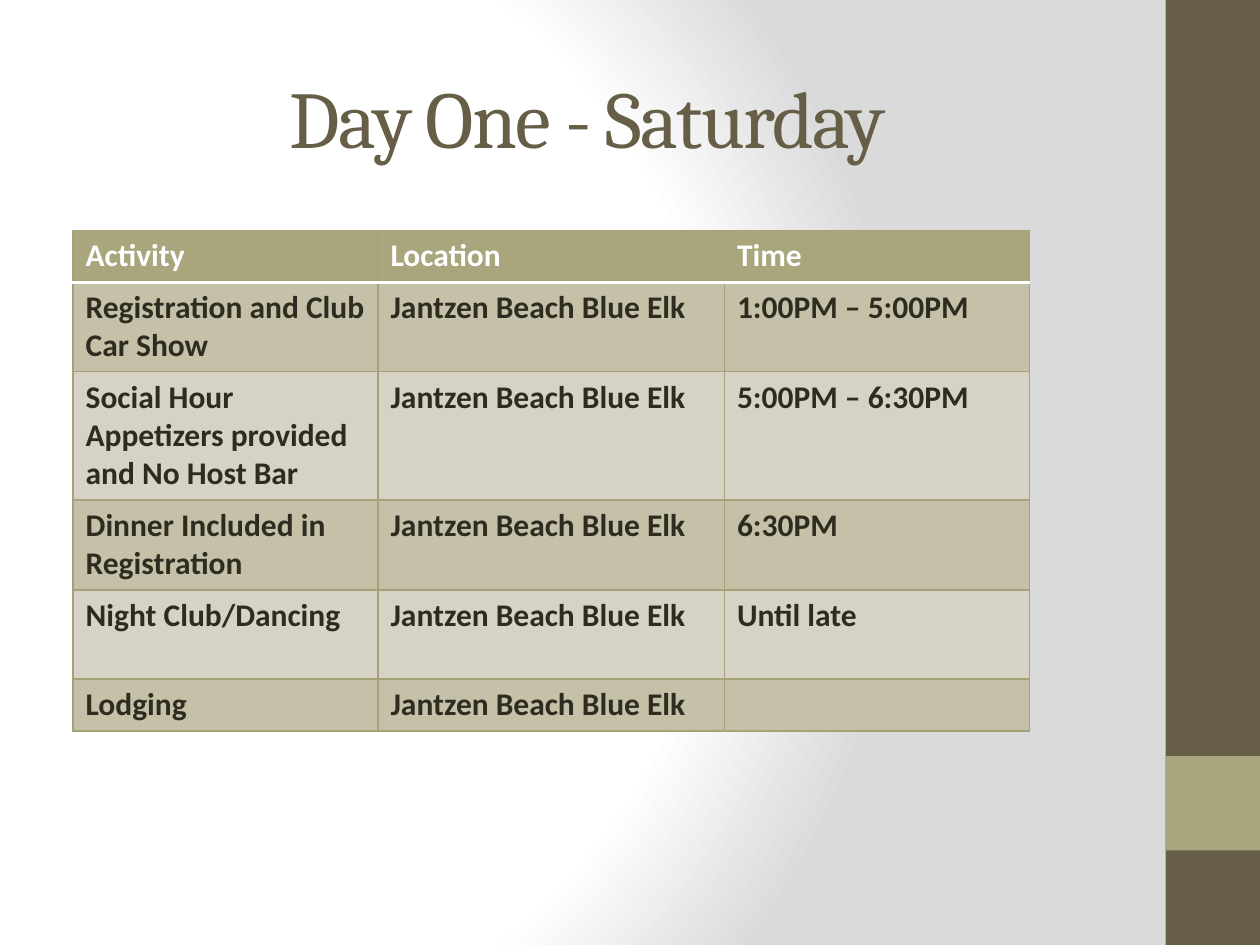
from pptx import Presentation
from pptx.dml.color import RGBColor
from pptx.enum.shapes import MSO_SHAPE
from pptx.enum.text import MSO_ANCHOR, PP_ALIGN
from pptx.oxml import parse_xml
from pptx.util import Inches, Pt

BROWN = RGBColor(0x67, 0x5E, 0x47)
OLIVE = RGBColor(0xA9, 0xA5, 0x7C)
OLIVE_MID = RGBColor(0xC4, 0xC1, 0xA8)
OLIVE_PALE = RGBColor(0xD6, 0xD3, 0xC6)
GRID = RGBColor(0xA6, 0xA2, 0x78)
INK = RGBColor(0x2F, 0x2B, 0x20)
WHITE = RGBColor(0xFF, 0xFF, 0xFF)
DRAWING_NS = "http://schemas.openxmlformats.org/drawingml/2006/main"
SLIDE_NS = "http://schemas.openxmlformats.org/presentationml/2006/main"

TITLE = "Day One - Saturday"
VENUE = "Jantzen Beach Blue Elk"
HEADINGS = ("Activity", "Location", "Time")
PROGRAM = [
    ("Registration and Club Car Show", VENUE, "1:00PM – 5:00PM"),
    ("Social Hour Appetizers provided and No Host Bar", VENUE, "5:00PM – 6:30PM"),
    ("Dinner Included in Registration", VENUE, "6:30PM"),
    ("Night Club/Dancing", VENUE, "Until late"),
    ("Lodging", VENUE, ""),
]
COLUMN_WIDTHS = (2.42, 2.75, 2.42)
ROW_HEIGHTS = (0.41, 0.71, 1.02, 0.71, 0.71, 0.41)
SIDE_BARS = [(0, 7.5, BROWN), (6, 0.75, OLIVE)]
BACKGROUND_STOPS = [(0, "FFFFFF"), (75, "FFFFFF"), (100, "DADADA")]


def set_background(slide):
    stops = "".join(
        f'<a:gs pos="{position * 1000}"><a:srgbClr val="{color}"/></a:gs>'
        for position, color in BACKGROUND_STOPS
    )
    slide.element.cSld.insert(0, parse_xml(
        f'<p:bg xmlns:p="{SLIDE_NS}" xmlns:a="{DRAWING_NS}"><p:bgPr>'
        f'<a:gradFill rotWithShape="1"><a:gsLst>{stops}</a:gsLst><a:path path="circle">'
        '<a:fillToRect l="20000" t="50000" r="100000" b="50000"/></a:path></a:gradFill>'
        '<a:effectLst/></p:bgPr></p:bg>'
    ))


def add_side_bar(slide, top, height, color):
    bar = slide.shapes.add_shape(
        MSO_SHAPE.RECTANGLE, Inches(9.25), Inches(top), Inches(0.75), Inches(height))
    bar.shadow.inherit = False
    bar.fill.solid()
    bar.fill.fore_color.rgb = color
    bar.line.fill.background()


def format_title(title):
    title.left, title.top = Inches(0.5), Inches(0.3)
    title.width, title.height = Inches(8.33), Inches(1.25)
    title.text_frame.text = TITLE
    title.text_frame.vertical_anchor = MSO_ANCHOR.MIDDLE
    heading = title.text_frame.paragraphs[0]
    heading.alignment = PP_ALIGN.CENTER
    heading.font.name = "Cambria"
    heading.font.size = Pt(46)
    heading.font.color.rgb = BROWN
    heading.runs[0].font._element.set("spc", "-100")


def set_borders(cell, row):
    borders = {side: (GRID, 1) for side in "LRTB"}
    if row < 2:
        borders["B" if row == 0 else "T"] = (WHITE, 2)
    properties = cell._tc.get_or_add_tcPr()
    for side, (color, width) in borders.items():
        properties.append(parse_xml(
            f'<a:ln{side} xmlns:a="{DRAWING_NS}" w="{Pt(width)}"><a:solidFill>'
            f'<a:srgbClr val="{color}"/></a:solidFill></a:ln{side}>'
        ))


def format_cell(cell, text, row):
    set_borders(cell, row)
    cell.fill.solid()
    cell.fill.fore_color.rgb = OLIVE if row == 0 else OLIVE_MID if row % 2 else OLIVE_PALE
    cell.text = text
    font = cell.text_frame.paragraphs[0].font
    font.name = "Calibri"
    font.size = Pt(18)
    font.bold = True
    font.color.rgb = INK if row else WHITE


def add_program(slide):
    table = slide.shapes.add_table(
        len(ROW_HEIGHTS), len(COLUMN_WIDTHS), Inches(0.58), Inches(1.83),
        Inches(sum(COLUMN_WIDTHS)), Inches(sum(ROW_HEIGHTS))).table
    for column, width in zip(table.columns, COLUMN_WIDTHS):
        column.width = Inches(width)
    for row, (height, texts) in enumerate(zip(ROW_HEIGHTS, [HEADINGS, *PROGRAM])):
        table.rows[row].height = Inches(height)
        for column, text in enumerate(texts):
            format_cell(table.cell(row, column), text, row)


def main():
    deck = Presentation()
    deck.slide_width, deck.slide_height = Inches(10), Inches(7.5)
    slide = deck.slides.add_slide(deck.slide_layouts[5])
    set_background(slide)
    for top, height, color in SIDE_BARS:
        add_side_bar(slide, top, height, color)
    format_title(slide.shapes.title)
    add_program(slide)
    deck.save("out.pptx")


if __name__ == "__main__":
    main()
